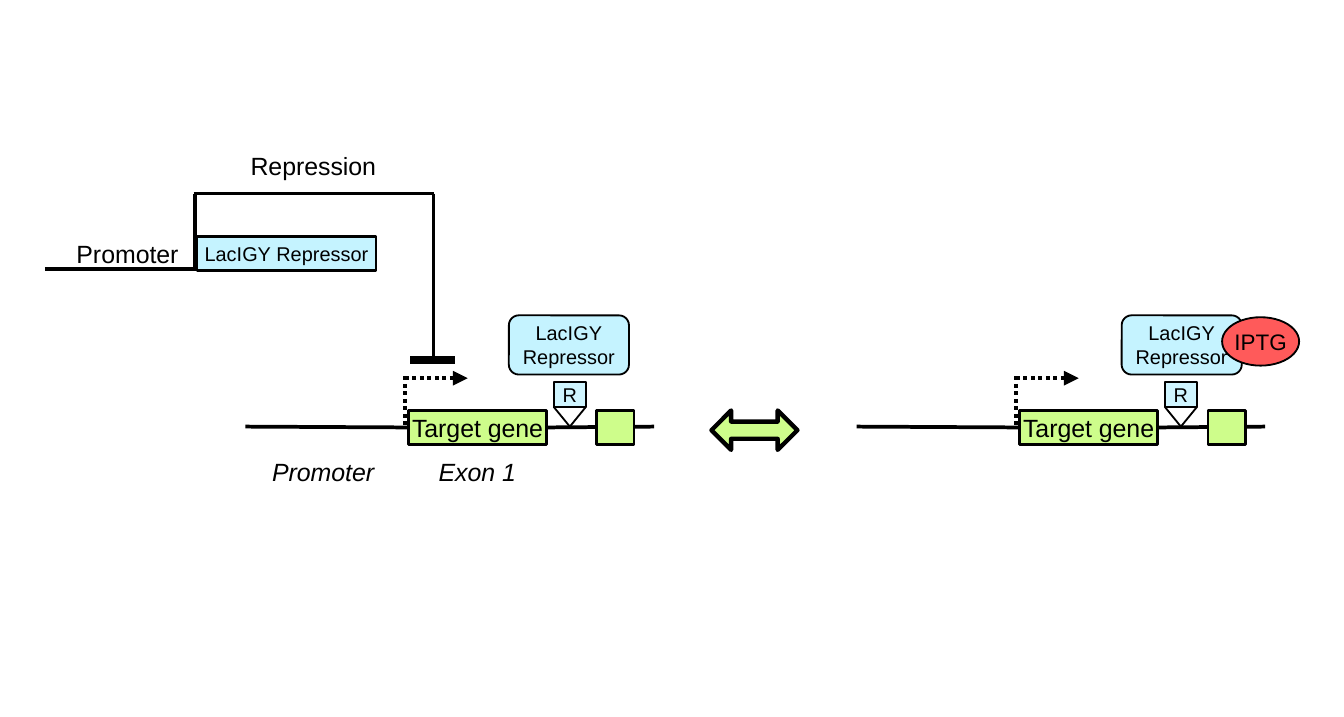
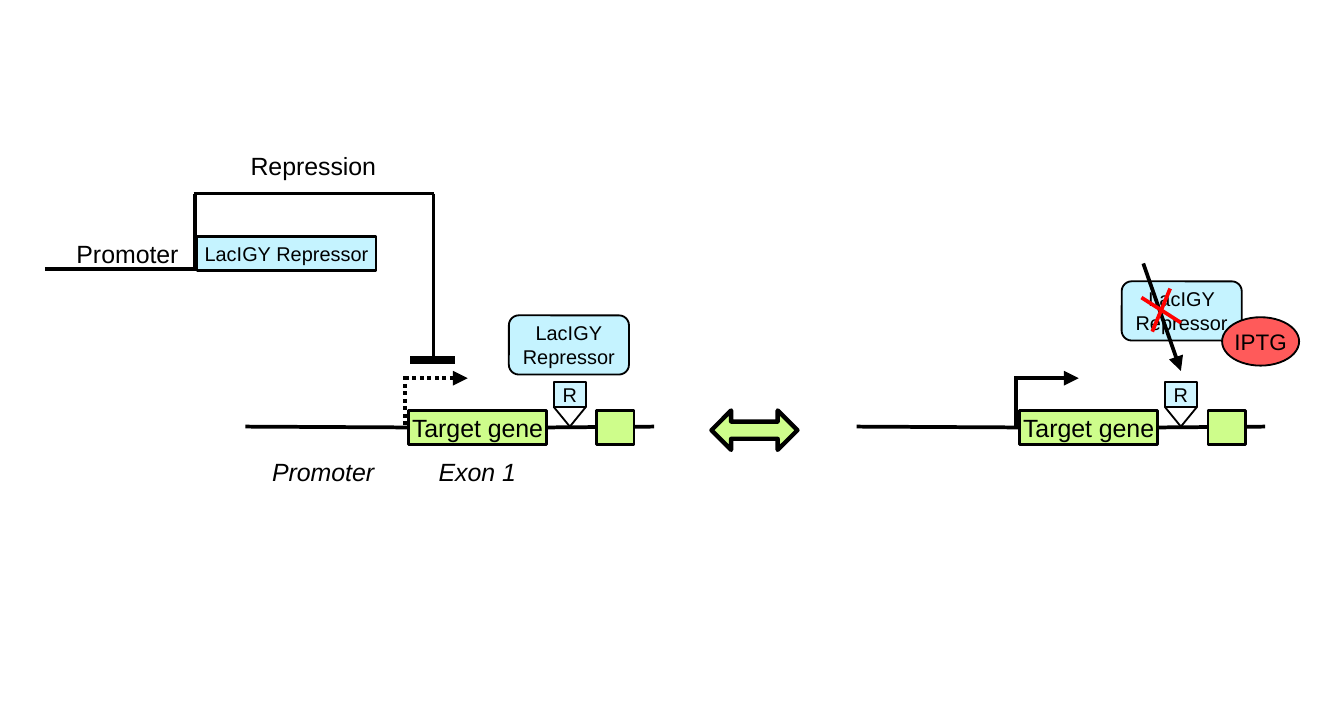
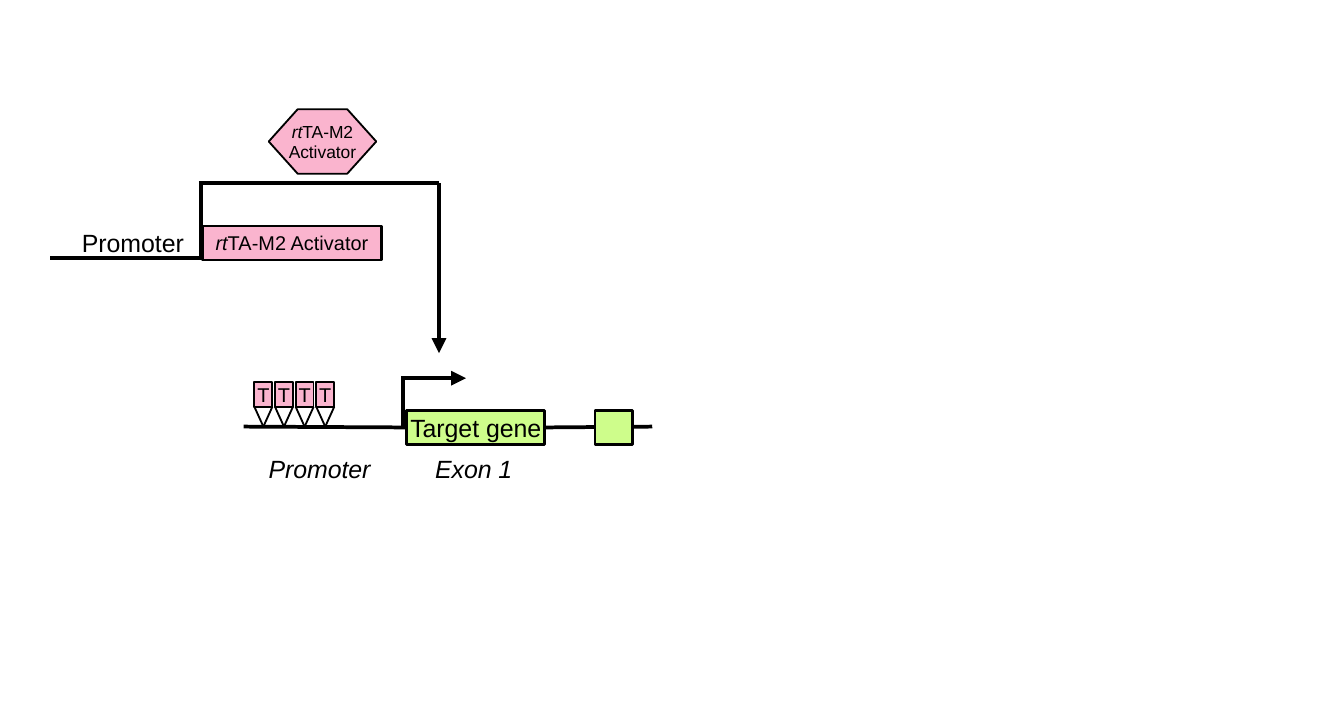
from lxml import etree
from pptx import Presentation
from pptx import util as u
from pptx.dml.color import RGBColor
from pptx.enum import dml, shapes, text
from pptx.oxml.ns import qn

FONT = "Arial"
BLACK, RED = "000000", "FF0000"
BLUE, PALE_BLUE, GREEN, PINK, CORAL = "C5F3FF", "CFF5FF", "CEFD8B", "FAB4CE", "FF5A5A"
KIND = shapes.MSO_SHAPE


def add_box(slide, kind, place, words="", size=10, fill=None, weight=1, italic=None):
    lengths = [u.Inches(value) for value in place]
    if kind is None:
        shape = slide.shapes.add_textbox(*lengths)
    else:
        shape = slide.shapes.add_shape(kind, *lengths)
        shape.shadow.inherit = False
        shape.fill.solid()
        shape.fill.fore_color.rgb = RGBColor.from_string(fill)
        shape.line.color.rgb = RGBColor.from_string(BLACK)
        shape.line.width = u.Pt(weight)
    if not words:
        return shape
    frame = shape.text_frame
    frame.word_wrap = False
    if kind is not None:
        frame.vertical_anchor = text.MSO_ANCHOR.MIDDLE
        frame.margin_left = frame.margin_right = frame.margin_top = frame.margin_bottom = 0
    for number, line in enumerate(words.split("\n")):
        paragraph = frame.add_paragraph() if number else frame.paragraphs[0]
        paragraph.alignment = text.PP_ALIGN.LEFT if kind is None else text.PP_ALIGN.CENTER
        paragraph.font.name = FONT
        paragraph.font.size = u.Pt(size)
        paragraph.font.italic = italic
        paragraph.font.color.rgb = RGBColor.from_string(BLACK)
        if line.startswith("rt"):
            prefix = paragraph.add_run()
            prefix.text = "rt"
            prefix.font.italic = True
            line = line[2:]
        paragraph.add_run().text = line
    return shape


def add_line(slide, x1, y1, x2, y2, weight=1.5, color=BLACK, dotted=False, arrow=False):
    ends = [u.Inches(value) for value in (x1, y1, x2, y2)]
    connector = slide.shapes.add_connector(shapes.MSO_CONNECTOR.STRAIGHT, *ends)
    connector.line.color.rgb = RGBColor.from_string(color)
    connector.line.width = u.Pt(weight)
    if dotted:
        connector.line.dash_style = dml.MSO_LINE.ROUND_DOT
    properties = connector.element.spPr
    if arrow:
        etree.SubElement(properties.find(qn("a:ln")), qn("a:tailEnd"), type="triangle")
    etree.SubElement(properties, qn("a:effectLst"))
    return connector


presentation = Presentation()
presentation.slide_width = u.Inches(7.5)
presentation.slide_height = u.Inches(4)
blank = presentation.slide_layouts[6]
bound, released, activated = [presentation.slides.add_slide(blank) for _ in range(3)]

regulators = [
    (bound, 0, 0, BLUE, "LacIGY Repressor"),
    (released, 0, 0, BLUE, "LacIGY Repressor"),
    (activated, 0.03, -0.06, PINK, "rtTA-M2 Activator"),
]
for slide, dx, dy, fill, label in regulators:
    activates = slide is activated
    add_box(slide, None, (0.29 + dx, 1.28 + dy, 0.81, 0.27), " Promoter")
    add_line(slide, 0.25 + dx, 1.5 + dy, 1.1 + dx, 1.5 + dy)
    add_line(slide, 1.09 + dx, 1.5 + dy, 1.09 + dx, 1.08 + dy)
    add_line(slide, 1.08 + dx, 1.08 + dy, 2.42 + dx, 1.08 + dy)
    add_line(slide, 2.42 + dx, 1.08 + dy, 2.42 + dx, 1.97 if activates else 1.99, arrow=activates)
    add_box(slide, KIND.RECTANGLE, (1.1 + dx, 1.32 + dy, 1, 0.19), label, 8, fill)

genes = [
    (bound, 0, True),
    (bound, 3.41, True),
    (released, 0, True),
    (released, 3.41, False),
    (activated, -0.01, False),
]
for slide, dx, dotted in genes:
    upstream = add_line(slide, 1.37 + dx, 2.38, 2.28 + dx, 2.38)
    downstream = add_line(slide, 3.05 + dx, 2.38, 3.65 + dx, 2.38)
    gene = add_box(slide, KIND.RECTANGLE, (2.28 + dx, 2.29, 0.77, 0.19), "Target gene", 10, GREEN)
    upstream.end_connect(gene, 1)
    downstream.begin_connect(gene, 3)
    add_box(slide, KIND.RECTANGLE, (3.33 + dx, 2.29, 0.21, 0.19), fill=GREEN)
    add_line(slide, 2.26 + dx, 2.11, 2.61 + dx, 2.11, dotted=dotted, arrow=True)
    add_line(slide, 2.26 + dx, 2.1, 2.26 + dx, 2.38, dotted=dotted)

sites = [(slide, left, 0.18, PALE_BLUE, "R") for slide in (bound, released) for left in (3.09, 6.5)]
sites += [(activated, 1.42 + 0.46 * number / 4, 0.1, PINK, "T") for number in range(4)]
for slide, left, width, fill, letter in sites:
    add_box(slide, KIND.RECTANGLE, (left, 2.13, width, 0.14), letter, 8, fill, 0.75)
    for side in (left, left + width):
        add_line(slide, side, 2.27, left + width / 2, 2.38, 0.75)

for slide, dx, top in [(bound, 0, 2.5), (released, 0, 2.5), (activated, -0.02, 2.48)]:
    add_box(slide, None, (1.42 + dx, top, 0.78, 0.27), "Promoter", italic=True)
    add_box(slide, None, (2.35 + dx, top, 0.63, 0.27), "Exon 1", italic=True)

for slide, right_top in [(bound, 1.76), (released, 1.57)]:
    add_box(slide, None, (1.3, 0.79, 0.91, 0.27), "Repression")
    add_line(slide, 2.29, 2.01, 2.54, 2.01, 3.25)
    exchange = add_box(slide, KIND.UP_DOWN_ARROW, (4.1, 2.16, 0.22, 0.48), fill=GREEN, weight=1.75)
    exchange.rotation = 270
    exchange.adjustments[1] = 0.435
    for left, top in [(2.84, 1.76), (6.26, right_top)]:
        add_box(slide, KIND.ROUNDED_RECTANGLE, (left, top, 0.67, 0.33), "LacIGY\nRepressor", 8, BLUE, 0.75)
    add_box(slide, KIND.OVAL, (6.82, 1.77, 0.43, 0.27), "IPTG", 9, CORAL, 0.75)

add_line(released, 6.38, 1.47, 6.59, 2.07, arrow=True)
add_line(released, 6.53, 1.61, 6.43, 1.85, color=RED)
add_line(released, 6.37, 1.66, 6.59, 1.8, color=RED)

activator = add_box(activated, KIND.HEXAGON, (1.5, 0.61, 0.6, 0.36), "rtTA-M2\nActivator", 7, PINK, 0.75)
activator.adjustments[0] = 0.449

presentation.save("out.pptx")
